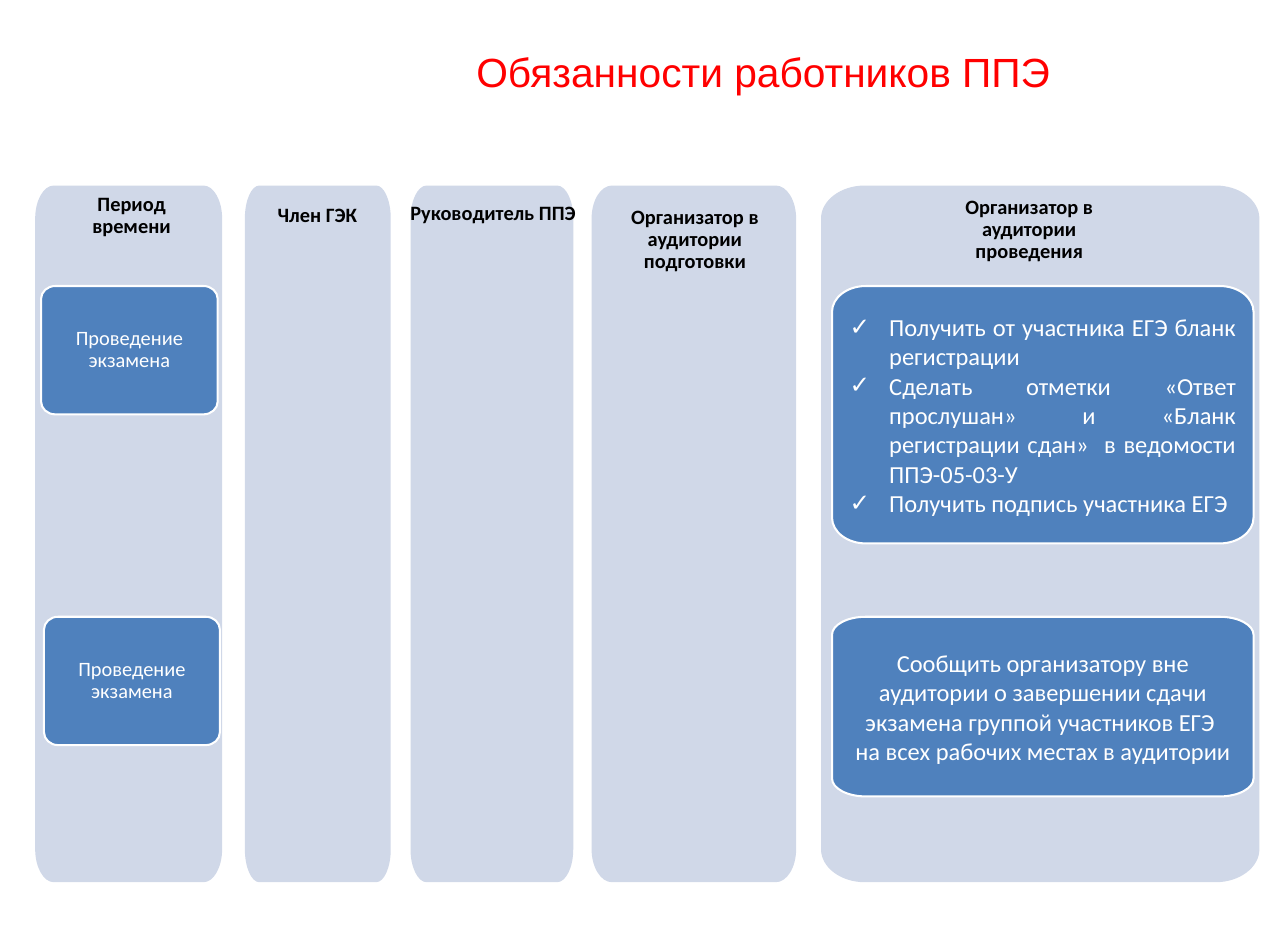
import pptx
import pptx.dml.color
import pptx.enum.text
import pptx.oxml
import pptx.oxml.ns
import pptx.util
from pptx.util import Inches

ALIGN = pptx.enum.text.PP_ALIGN
ANCHOR = pptx.enum.text.MSO_ANCHOR
NAMESPACE = pptx.oxml.ns.nsdecls("a")
ARC = 0.55  # control point distance of a quarter ellipse


def color(value):
    return pptx.dml.color.RGBColor.from_string(value)


def add_rounded(left, top, width, height, radius_x, radius_y, fill):
    """Outline a rectangle with elliptical corners."""
    right, bottom = left + width, top + height
    points = [
        (left, top + radius_y), (left + radius_x, top),
        (right - radius_x, top), (right, top + radius_y),
        (right, bottom - radius_y), (right - radius_x, bottom),
        (left + radius_x, bottom), (left, bottom - radius_y),
    ]
    points = [(Inches(x), Inches(y)) for x, y in points]
    builder = slide.shapes.build_freeform(*points[0])
    builder.add_line_segments(points[1:], close=True)
    shape = builder.convert_to_shape()

    # Turn every other segment into a curve
    segments = list(shape._element.iter(pptx.oxml.ns.qn("a:lnTo")))
    for index in range(0, 8, 2):
        (start_x, start_y), (end_x, end_y) = [
            (x - Inches(left), y - Inches(top)) for x, y in points[index:index + 2]]
        corner_x, corner_y = (start_x, end_y) if index % 4 == 0 else (end_x, start_y)
        curve = [
            (start_x + ARC * (corner_x - start_x), start_y + ARC * (corner_y - start_y)),
            (end_x + ARC * (corner_x - end_x), end_y + ARC * (corner_y - end_y)),
            (end_x, end_y),
        ]
        nodes = "".join(f'<a:pt x="{round(x)}" y="{round(y)}"/>' for x, y in curve)
        segment = segments[index]
        segment.getparent().replace(segment, pptx.oxml.parse_xml(
            f"<a:cubicBezTo {NAMESPACE}>{nodes}</a:cubicBezTo>"))

    shape.shadow.inherit = False
    shape.fill.solid()
    shape.fill.fore_color.rgb = color(fill)
    shape.line.fill.background()
    return shape


presentation = pptx.Presentation()
presentation.slide_width = Inches(17.57)
presentation.slide_height = Inches(12.79)
slide = presentation.slides.add_slide(presentation.slide_layouts[6])

# Columns
for left, width in [(0.48, 2.55), (3.34, 1.99), (5.6, 2.22), (8.07, 2.79), (11.2, 5.98)]:
    add_rounded(left, 2.53, width, 9.5, 0.1 * width, 0.45, "D0D8E8")

# Cards: box, text size, alignment, line spacing, paragraphs as lists of lines
stage = [["Проведение экзамена"]]
duties = [
    ["Получить от участника ЕГЭ бланк регистрации"],
    ["Сделать отметки «Ответ прослушан» и «Бланк регистрации сдан»  в ведомости ППЭ-05-03-У"],
    ["Получить подпись участника ЕГЭ"],
]
report = [["Сообщить организатору вне аудитории о завершении сдачи экзамена группой участников ЕГЭ ",
           "на всех рабочих местах в аудитории"]]
cards = [
    (11.35, 3.9, 5.75, 3.51, 24, ALIGN.JUSTIFY, 1.0, duties),
    (11.35, 8.41, 5.75, 2.45, 24, ALIGN.CENTER, 1.0, report),
    (0.56, 3.9, 2.41, 1.75, 20, ALIGN.CENTER, 0.9, stage),
    (0.6, 8.41, 2.4, 1.75, 20, ALIGN.CENTER, 0.9, stage),
]
for left, top, width, height, size, alignment, spacing, paragraphs in cards:
    card = add_rounded(left, top, width, height, 0.08 * width, 0.1 * height, "4F81BD")
    card.line.color.rgb = color("FFFFFF")
    card.line.width = pptx.util.Pt(2)
    frame = card.text_frame
    frame.word_wrap = True
    frame.vertical_anchor = ANCHOR.MIDDLE
    frame.margin_left = frame.margin_right = Inches(0.24)
    frame.margin_top = frame.margin_bottom = Inches(0.2)
    for index, lines in enumerate(paragraphs):
        paragraph = frame.add_paragraph() if index else frame.paragraphs[0]
        paragraph.alignment = alignment
        paragraph.line_spacing = spacing
        if spacing < 1:
            paragraph.space_after = pptx.util.Pt(7)
        if paragraphs is duties:
            properties = paragraph._p.get_or_add_pPr()
            properties.set("marL", str(Inches(0.54)))
            properties.set("indent", str(-Inches(0.54)))
            for bullet in ('<a:buFont %s typeface="Arial"/>', '<a:buChar %s char="✓"/>'):
                properties.append(pptx.oxml.parse_xml(bullet % NAMESPACE))
        for number, line in enumerate(lines):
            if number:
                paragraph.add_line_break()
            run = paragraph.add_run()
            run.text = line
            run.font.name = "Calibri"
            run.font.size = pptx.util.Pt(size)
            run.font.color.rgb = color("FFFFFF")

# Title and column headings
labels = [
    (12.62, 2.6, 2.84, 1.08, "Организатор в аудитории проведения"),
    (8.01, 2.73, 2.94, 1.08, "Организатор в аудитории подготовки"),
    (5.35, 2.68, 2.75, 0.78, "Руководитель ППЭ"),
    (3.5, 2.71, 1.66, 0.48, "Член ГЭК"),
    (0.69, 2.56, 2.21, 0.78, "Период времени"),
    (3.32, -0.03, 14.18, 2, "Обязанности работников ППЭ"),
]
for left, top, width, height, text in labels:
    is_title = text.startswith("Обязанности")
    box = slide.shapes.add_textbox(Inches(left), Inches(top), Inches(width), Inches(height))
    frame = box.text_frame
    frame.word_wrap = True
    frame.vertical_anchor = ANCHOR.MIDDLE if is_title else ANCHOR.TOP
    frame.margin_left = frame.margin_right = Inches(0.17)
    frame.margin_top = frame.margin_bottom = Inches(0.09)
    paragraph = frame.paragraphs[0]
    paragraph.alignment = ALIGN.CENTER
    paragraph.line_spacing = 1.0 if is_title else 0.9
    run = paragraph.add_run()
    run.text = text
    run.font.name = "Arial" if is_title else "Calibri"
    run.font.size = pptx.util.Pt(40 if is_title else 20)
    run.font.bold = not is_title
    run.font.color.rgb = color("FF0000" if is_title else "000000")

presentation.save("out.pptx")
